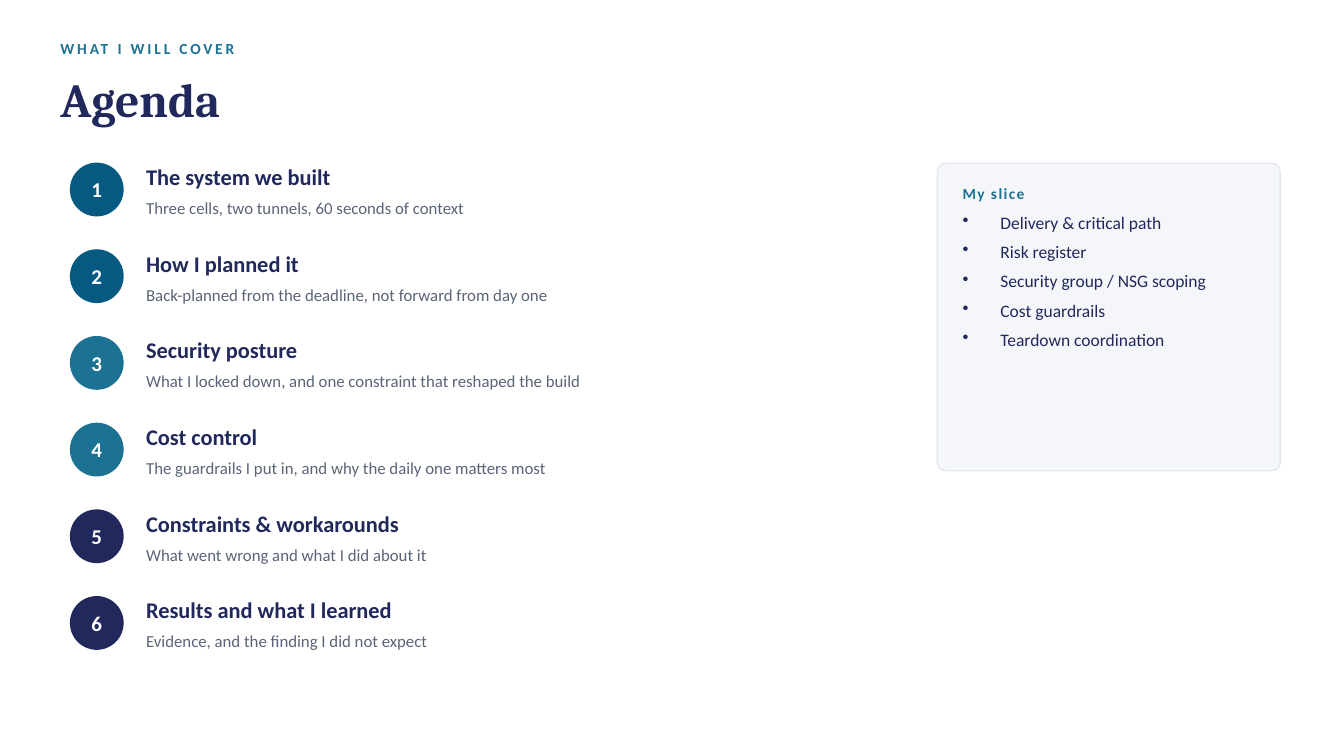
from lxml import etree
from pptx import Presentation
from pptx import util as u
from pptx.dml.color import RGBColor
from pptx.enum import shapes, text
from pptx.oxml import ns

Pt = u.Pt
COLORS = {
    "navy": "21295C", "blue": "065A82", "teal": "1C7293", "gray": "5A6478",
    "white": "FFFFFF", "panel": "F4F6FA", "border": "E2E7F0",
}


def write(frame, content, size=12, color="navy", font="Calibri", bold=False,
          spacing=0, align=None, anchor=text.MSO_ANCHOR.MIDDLE, bullet=False):
    """Fill a text frame with one paragraph per line of content."""
    frame.word_wrap = True
    frame.vertical_anchor = anchor
    frame.margin_left = frame.margin_top = frame.margin_right = frame.margin_bottom = 0
    for index, line in enumerate(content.split("\n")):
        para = frame.add_paragraph() if index else frame.paragraphs[0]
        para.alignment = align
        if bullet:
            props = para._p.get_or_add_pPr()
            props.set("marL", str(Pt(27)))
            props.set("indent", str(-Pt(27)))
            etree.SubElement(props, ns.qn("a:buChar"), char="•")
            para.space_after = Pt(6)
        span = para.add_run()
        span.text = line
        span.font.size = Pt(size)
        span.font.name = font
        span.font.bold = bold
        span.font.color.rgb = RGBColor.from_string(COLORS[color])
        if spacing:
            span._r.get_or_add_rPr().set("spc", str(spacing * 100))


def add_shape(page, kind, place, fill, line):
    shape = page.shapes.add_shape(kind, *map(Pt, place))
    shape.shadow.inherit = False
    shape.fill.solid()
    shape.fill.fore_color.rgb = RGBColor.from_string(COLORS[fill])
    shape.line.color.rgb = RGBColor.from_string(COLORS[line])
    shape.line.width = Pt(1)
    return shape


deck = Presentation()
deck.slide_width, deck.slide_height = Pt(960), Pt(540)
page = deck.slides.add_slide(deck.slide_layouts[6])

# Heading
box = page.shapes.add_textbox(Pt(43.2), Pt(24.48), Pt(871.2), Pt(20.16))
write(box.text_frame, "WHAT I WILL COVER", size=11, color="teal", bold=True, spacing=2)
box = page.shapes.add_textbox(Pt(43.2), Pt(44.64), Pt(871.2), Pt(51.84))
write(box.text_frame, "Agenda", size=34, font="Cambria", bold=True)

# Numbered agenda items
agenda = [
    ("The system we built", "Three cells, two tunnels, 60 seconds of context", "blue"),
    ("How I planned it", "Back-planned from the deadline, not forward from day one", "blue"),
    ("Security posture", "What I locked down, and one constraint that reshaped the build", "teal"),
    ("Cost control", "The guardrails I put in, and why the daily one matters most", "teal"),
    ("Constraints & workarounds", "What went wrong and what I did about it", "navy"),
    ("Results and what I learned", "Evidence, and the finding I did not expect", "navy"),
]
first_top, pitch, diameter = 116.64, 61.92, 37.44
for index, (topic, detail, color) in enumerate(agenda):
    top = first_top + index * pitch
    circle = add_shape(page, shapes.MSO_SHAPE.OVAL,
                       (50.4, top, diameter, diameter), color, color)
    write(circle.text_frame, str(index + 1), size=15, color="white", bold=True,
          align=text.PP_ALIGN.CENTER)
    box = page.shapes.add_textbox(Pt(104.4), Pt(top - 2.88), Pt(316.8), Pt(24.48))
    write(box.text_frame, topic, size=16, bold=True)
    box = page.shapes.add_textbox(Pt(104.4), Pt(top + 20.16), Pt(532.8), Pt(23.04))
    write(box.text_frame, detail, color="gray")

# Side panel
panel = add_shape(page, shapes.MSO_SHAPE.ROUNDED_RECTANGLE,
                  (669.6, first_top, 244.8, 219.6), "panel", "border")
panel.adjustments[0] = 0.026
box = page.shapes.add_textbox(Pt(687.6), Pt(128.16), Pt(208.8), Pt(20.16))
write(box.text_frame, "My slice", size=11, color="teal", bold=True, spacing=1)

duties = ["Delivery & critical path", "Risk register", "Security group / NSG scoping",
          "Cost guardrails", "Teardown coordination"]
box = page.shapes.add_textbox(Pt(687.6), Pt(151.2), Pt(212.4), Pt(176.4))
write(box.text_frame, "\n".join(duties), size=12.5, bullet=True,
      anchor=text.MSO_ANCHOR.TOP)

deck.save("out.pptx")
